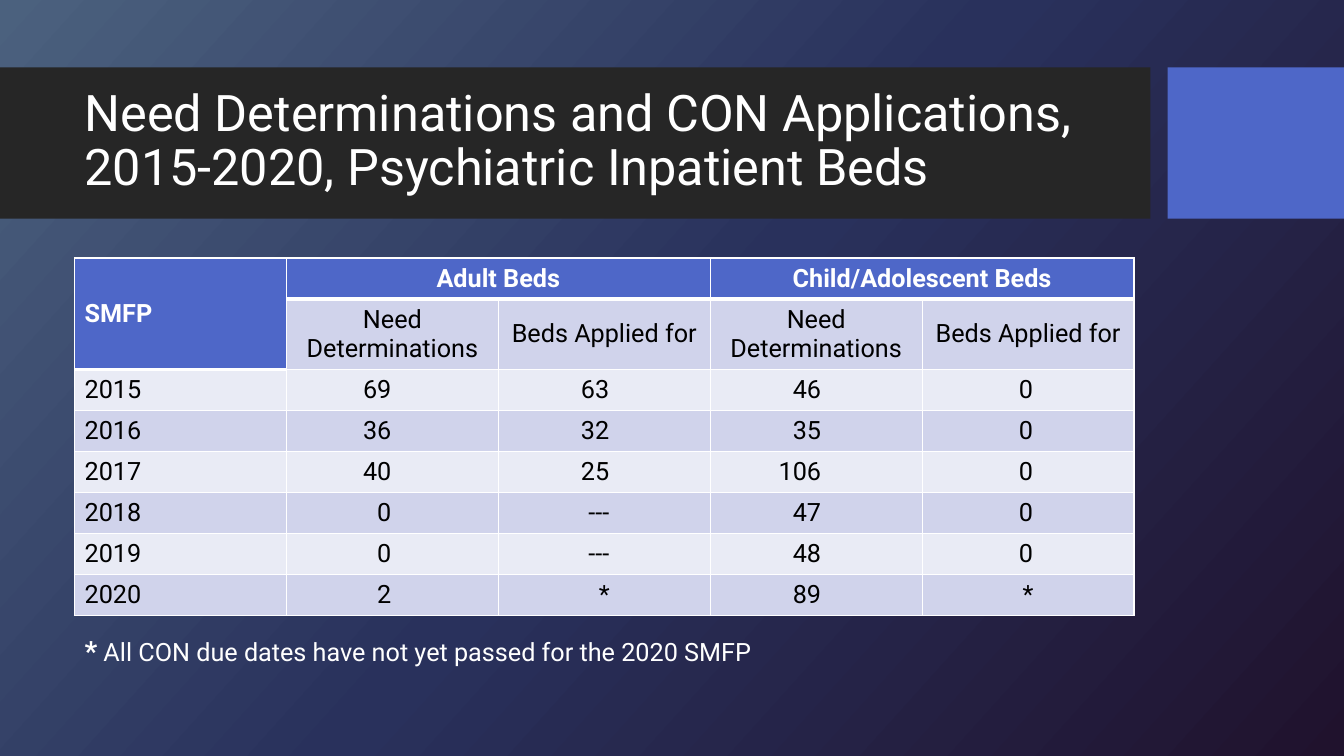
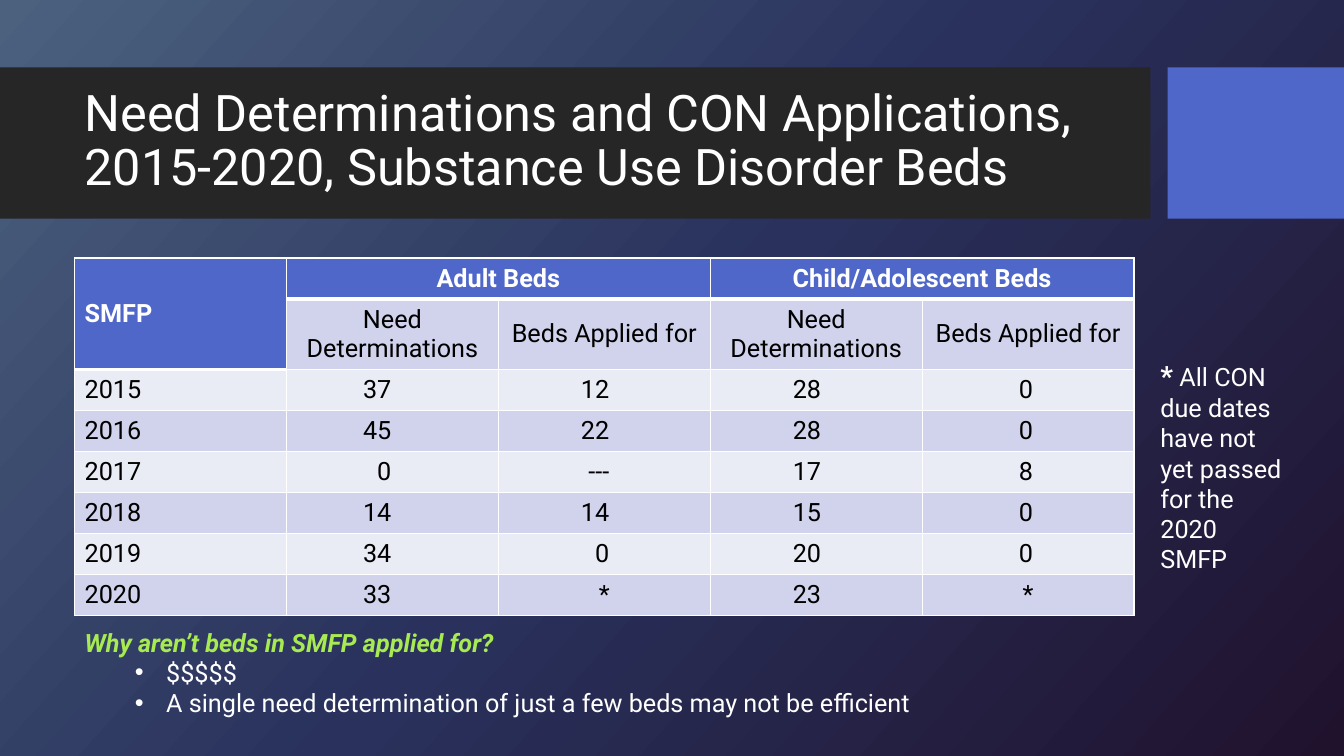
import copy

import lxml.etree
import pptx
import pptx.dml.color
import pptx.enum.shapes
import pptx.enum.text
import pptx.oxml.ns
import pptx.util

RGB = pptx.dml.color.RGBColor
WHITE = RGB(0xFF, 0xFF, 0xFF)
BLACK = RGB(0x00, 0x00, 0x00)
DARK = RGB(0x26, 0x26, 0x26)
BLUE = RGB(0x4E, 0x67, 0xC8)
LIME = RGB(0xA7, 0xEA, 0x52)
MIST = RGB(0xD0, 0xD3, 0xEB)
PALE = RGB(0xE9, 0xEB, 0xF5)
SKY = [(RGB(0x4B, 0x61, 0x7E), 0), (RGB(0x29, 0x31, 0x5C), 0.5), (RGB(0x20, 0x12, 0x2D), 1)]

qn = pptx.oxml.ns.qn
ALIGN = pptx.enum.text.PP_ALIGN
MIDDLE = pptx.enum.text.MSO_ANCHOR.MIDDLE
RECT = pptx.enum.shapes.MSO_SHAPE.RECTANGLE

LEFT, WIDE = 5.55, 78.84
ROW, TALL = 5.42, 9.1
HEAD = (LEFT, 10.93, WIDE, 15.73)
BANDS = [(DARK, (0, 8.93, 85.6, 20)), (BLUE, (86.87, 8.93, 13.13, 20))]
TABS = [0.94, 1, 1, 1]
TOP = ["SMFP", "Adult Beds", "", "Child/Adolescent Beds", ""]
SUB = [""] + ["Need Determinations", "Beds Applied for"] * 2
NOTE = " All CON due dates have not yet passed for the 2020 SMFP"
ASK = "Why aren’t beds in SMFP applied for?"
WHY = ["$$$$$", "A single need determination of just a few beds may not be efficient"]

PAGES = [
    ("Psychiatric Inpatient Beds", [(LEFT, 83.2, 67.97, 5.87)], [
        ["2015", "69", "63", "46", "0"],
        ["2016", "36", "32", "35", "0"],
        ["2017", "40", "25", "106", "0"],
        ["2018", "0", "---", "47", "0"],
        ["2019", "0", "---", "48", "0"],
        ["2020", "2", "*", "89", "*"],
    ]),
    ("Substance Use Disorder Beds", [(85.6, 46.8, 10.88, 26), (LEFT, 82.27, 92.5, 13.47)], [
        ["2015", "37", "12", "28", "0"],
        ["2016", "45", "22", "28", "0"],
        ["2017", "0", "---", "17", "8"],
        ["2018", "14", "14", "15", "0"],
        ["2019", "34", "0", "20", "0"],
        ["2020", "33", "*", "23", "*"],
    ]),
]

deck = pptx.Presentation()
deck.slide_width = pptx.util.Inches(13.33)
deck.slide_height = pptx.util.Inches(7.5)


def area(left, top, width, height):
    wide, high = deck.slide_width / 100, deck.slide_height / 100
    return [int(n) for n in (left * wide, top * high, width * wide, height * high)]


def write(part, words, size, tint, bold=False):
    part.text = words
    part.font.name = "Roboto"
    part.font.size = pptx.util.Pt(size)
    part.font.color.rgb = tint
    part.font.bold = bold


back = deck.slide_master.background.fill
back.gradient()
back.gradient_angle = 360 - 42
stops = deck.slide_master.element.find(".//" + qn("a:gsLst"))
stops.append(copy.deepcopy(stops[0]))
for stop, (tint, place) in zip(back.gradient_stops, SKY):
    stop.color.rgb = tint
    stop.position = place

for topic, spots, data in PAGES:
    page = deck.slides.add_slide(deck.slide_layouts[6])
    for tint, spot in BANDS:
        band = page.shapes.add_shape(RECT, *area(*spot))
        band.shadow.inherit = False
        band.fill.solid()
        band.fill.fore_color.rgb = tint
        band.line.fill.background()

    frames = []
    for spot in [HEAD] + spots:
        frame = page.shapes.add_textbox(*area(*spot)).text_frame
        frame.word_wrap = True
        frames.append(frame)

    frames[0].vertical_anchor = MIDDLE
    title = frames[0].paragraphs[0]
    title.line_spacing = 0.9
    write(title, "Need Determinations and CON Applications, 2015-2020, " + topic, 36, WHITE)

    note = frames[1].paragraphs[0]
    write(note.add_run(), "*", 20, WHITE, True)
    write(note.add_run(), NOTE, 18, WHITE)

    for frame in frames[2:]:
        ask = frame.paragraphs[0]
        write(ask, ASK, 18, LIME, True)
        ask.font.italic = True
        for words in WHY:
            item = frame.add_paragraph()
            item.level = 1
            props = item._p.get_or_add_pPr()
            props.set("marL", str(pptx.util.Inches(0.81)))
            props.set("indent", str(pptx.util.Inches(-0.31)))
            lxml.etree.SubElement(props, qn("a:buFont"), typeface="Arial")
            lxml.etree.SubElement(props, qn("a:buChar"), char="•")
            write(item, words, 18, WHITE)

    rows = [TOP, SUB] + data
    spot = area(LEFT, 34.13, WIDE, ROW * 7 + TALL)
    grid = page.shapes.add_table(len(rows), len(TOP), *spot).table
    grid.first_row = grid.horz_banding = False
    for r, row in enumerate(rows):
        grid.rows[r].height = area(0, 0, 0, TALL if r == 1 else ROW)[3]
        for c, words in enumerate(row):
            cell = grid.cell(r, c)
            blue = r == 0 or (r == 1 and c == 0)
            under = r == (1 if c else 2)
            cell.vertical_anchor = MIDDLE
            for side in "LRTB":
                thick = (side == "B" and blue) or (side == "T" and under)
                edge = lxml.etree.SubElement(cell._tc.get_or_add_tcPr(), qn("a:ln" + side))
                edge.set("w", str(pptx.util.Pt(3 if thick else 1)))
                paint = lxml.etree.SubElement(edge, qn("a:solidFill"))
                lxml.etree.SubElement(paint, qn("a:srgbClr"), val=str(WHITE))
            cell.fill.solid()
            cell.fill.fore_color.rgb = BLUE if blue else PALE if r % 2 == 0 else MIST
            if not words:
                continue
            par = cell.text_frame.paragraphs[0]
            if c and (r < 2 or words == "*"):
                par.alignment = ALIGN.CENTER
            elif c:
                tabs = lxml.etree.SubElement(par._p.get_or_add_pPr(), qn("a:tabLst"))
                stop = str(pptx.util.Inches(TABS[c - 1]))
                lxml.etree.SubElement(tabs, qn("a:tab"), pos=stop, algn="dec")
                words = "\t" + words
            write(par, words, 18, WHITE if blue else BLACK, blue)

    grid.cell(0, 0).merge(grid.cell(1, 0))
    for c in (1, 3):
        grid.cell(0, c).merge(grid.cell(0, c + 1))

deck.save("out.pptx")
